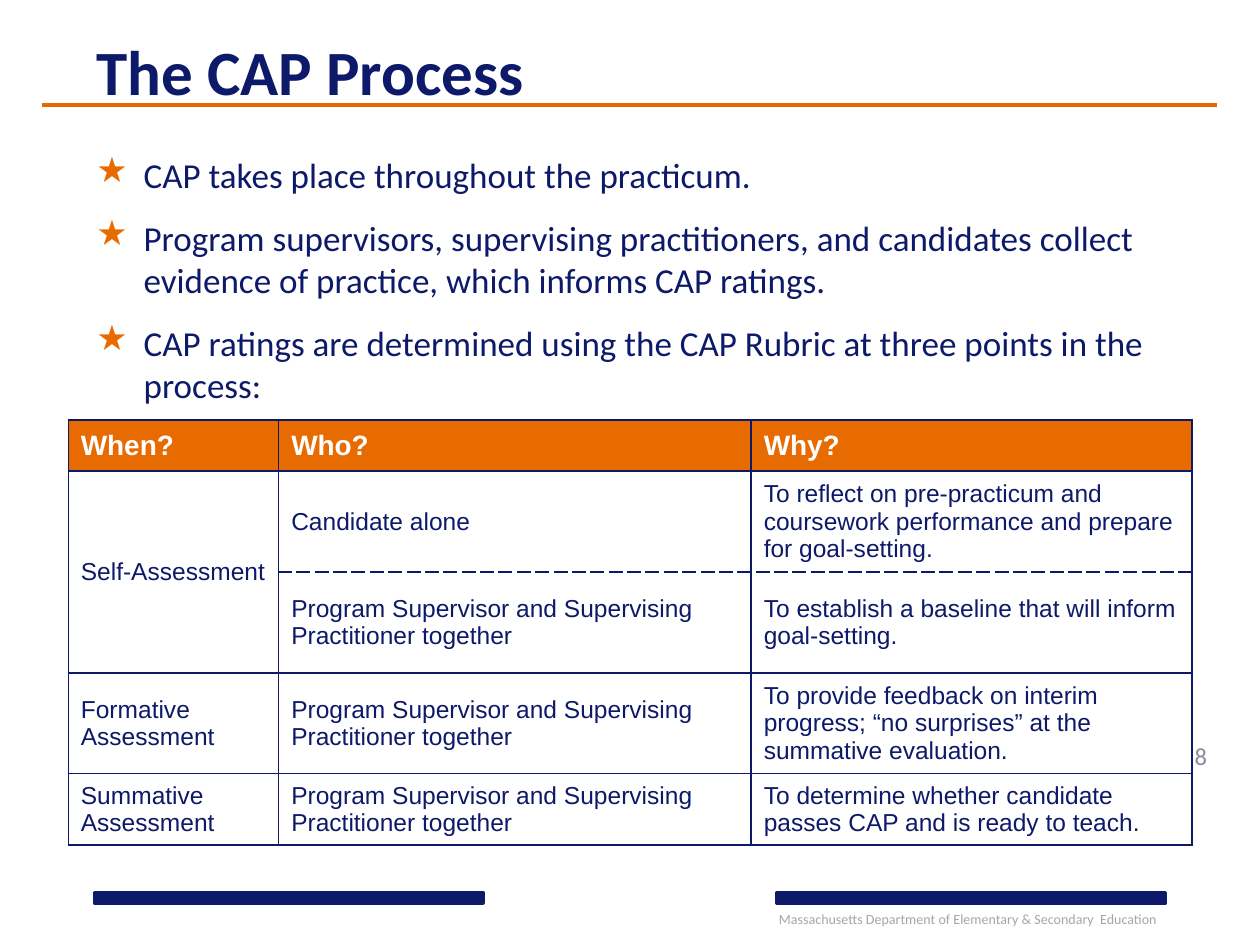
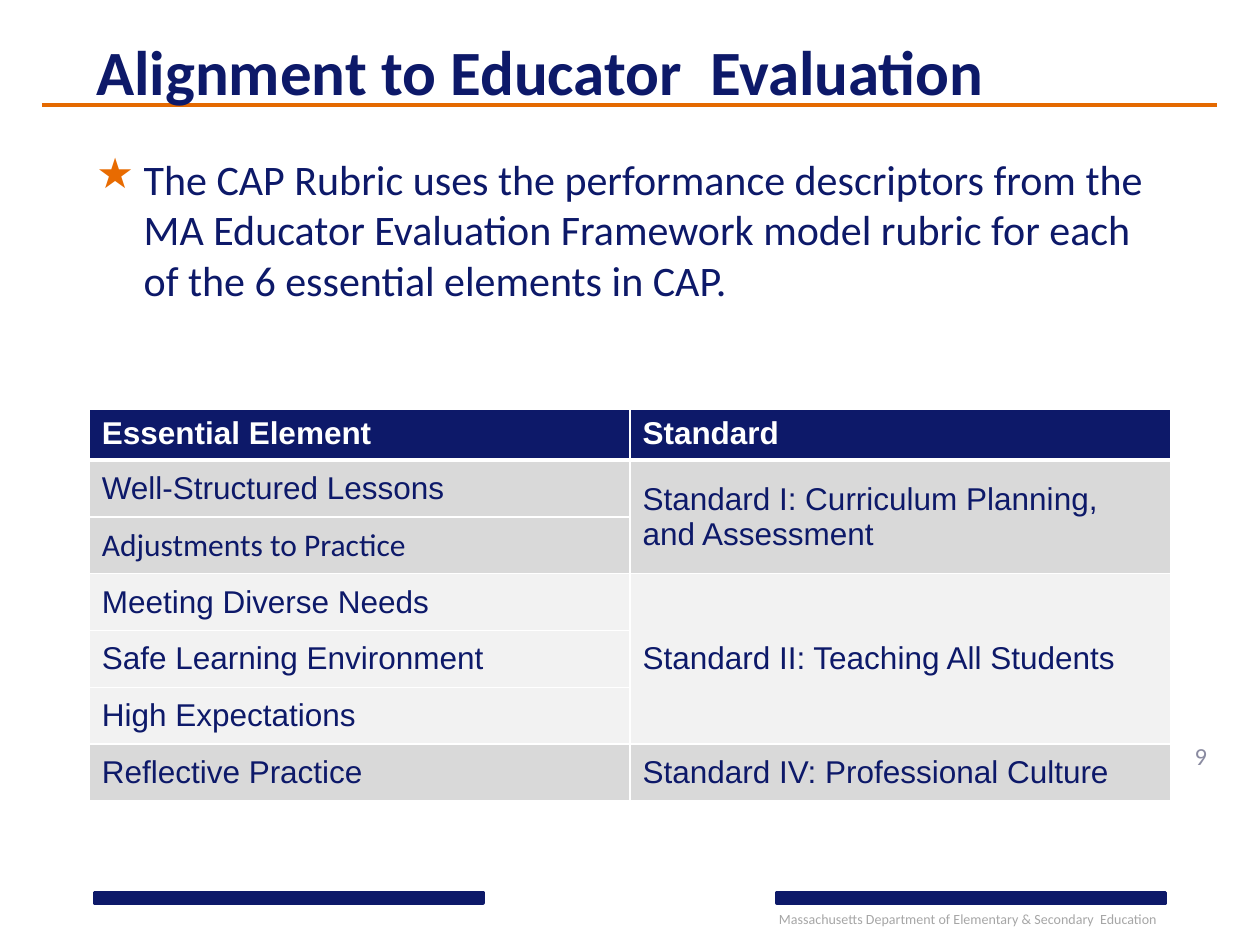
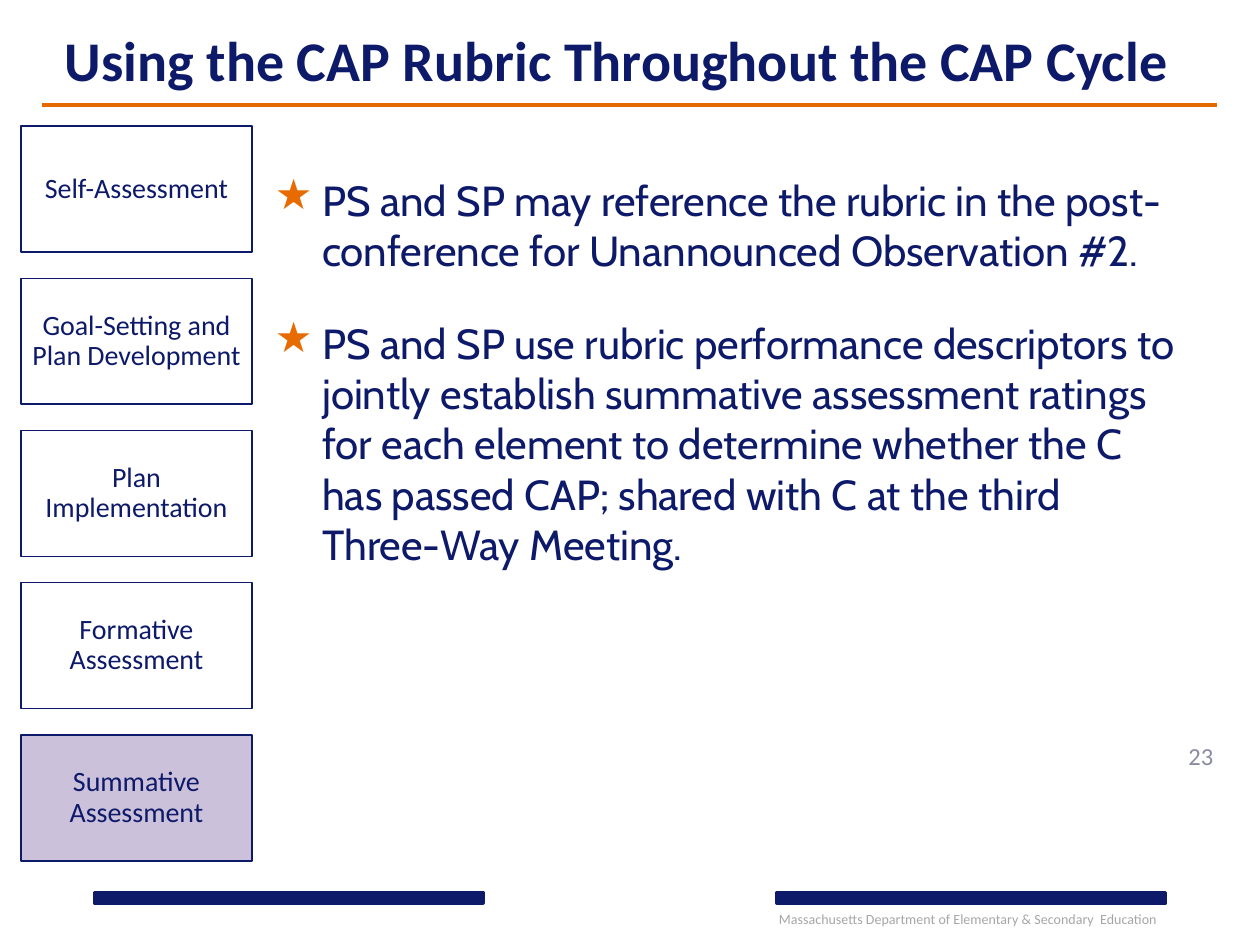
from lxml import etree
from pptx import Presentation
from pptx.dml.color import RGBColor
from pptx.enum import shapes, text
from pptx.oxml.ns import qn
from pptx.util import Pt

NAVY = RGBColor(0x0D, 0x19, 0x69)
ORANGE = RGBColor(0xE8, 0x6B, 0x01)
RULE_ORANGE = RGBColor(0xE4, 0x69, 0x00)
WHITE = RGBColor(0xFF, 0xFF, 0xFF)
SILVER = RGBColor(0xD9, 0xD9, 0xD9)
PALE = RGBColor(0xF2, 0xF2, 0xF2)
LILAC = RGBColor(0xCC, 0xC1, 0xDA)
FOOTER_GRAY = RGBColor(0xA6, 0xA6, 0xA6)
NUMBER_GRAY = RGBColor(0x8A, 0x8B, 0xA1)

MIDDLE = text.MSO_ANCHOR.MIDDLE
TOP = text.MSO_ANCHOR.TOP
CENTER = text.PP_ALIGN.CENTER

FOOTER = "Massachusetts Department of Elementary & Secondary  Education"
BAND_LEFTS = (54, 444)
INDENT = 27

TOGETHER = "Program Supervisor and Supervising Practitioner together"

# In table rows, None continues the cell above.
PROCESS = {
    "title": "The CAP Process", "number": 8,
    "bullets": [
        "CAP takes place throughout the practicum.",
        "Program supervisors, supervising practitioners, and candidates collect "
        "evidence of practice, which informs CAP ratings.",
        "CAP ratings are determined using the CAP Rubric at three points in the process:",
    ],
    "table": {
        "rows": [
            ("When?", "Who?", "Why?"),
            ("Self-Assessment", "Candidate alone",
             "To reflect on pre-practicum and coursework performance and prepare "
             "for goal-setting."),
            (None, TOGETHER, "To establish a baseline that will inform goal-setting."),
            ("Formative Assessment", TOGETHER,
             "To provide feedback on interim progress; “no surprises” at the "
             "summative evaluation."),
            ("Summative Assessment", TOGETHER,
             "To determine whether candidate passes CAP and is ready to teach."),
        ],
        "place": (39, 240),
        "widths": (120.25, 270, 252),
        "heights": (29.2, 52, 57.6, 57.6, 40.8),
        "fills": [ORANGE] + [WHITE] * 4,
        "sizes": (16, 14),
        "border": NAVY,
        "rules_under": {(1, 1): (1, "lgDash"), (1, 2): (1, "lgDash")},
        "header_anchor": MIDDLE,
        "cell_fonts": {},
    },
}
ALIGNMENT = {
    "title": "Alignment to Educator  Evaluation", "number": 9,
    "bullets": [
        "The CAP Rubric uses the performance descriptors from the MA Educator "
        "Evaluation Framework model rubric for each of the 6 essential elements in CAP.",
    ],
    "table": {
        "rows": [
            ("Essential Element", "Standard"),
            ("Well-Structured Lessons", "Standard I: Curriculum Planning, and Assessment"),
            ("Adjustments to Practice", None),
            ("Meeting Diverse Needs", "Standard II: Teaching All Students"),
            ("Safe Learning Environment", None),
            ("High Expectations", None),
            ("Reflective Practice", "Standard IV: Professional Culture"),
        ],
        "place": (51, 234),
        "widths": (309, 309),
        "heights": [24] + [32.5] * 6,
        "fills": [NAVY] + [SILVER] * 2 + [PALE] * 3 + [SILVER],
        "sizes": (18, 18),
        "border": WHITE,
        "rules_under": {(0, 0): (3, "solid"), (0, 1): (3, "solid")},
        "header_anchor": TOP,
        "cell_fonts": {(2, 0): "Calibri"},
    },
}
CYCLE = {
    "title": "Using the CAP Rubric Throughout the CAP Cycle", "number": 23,
    "bullets": [
        "PS and SP may reference the rubric in the post-conference for "
        "Unannounced Observation #2.",
        "PS and SP use rubric performance descriptors to jointly establish summative "
        "assessment ratings for each element to determine whether the C has passed CAP; "
        "shared with C at the third Three-Way Meeting.",
    ],
    "steps": ["Self-Assessment", "Goal-Setting and Plan Development",
              "Plan Implementation", "Formative Assessment", "Summative Assessment"],
    "current": "Summative Assessment",
}


def points(values):
    return [Pt(value) for value in values]


def write(para, words, color, **font):
    span = para.add_run()
    span.text = words
    span.font.color.rgb = color
    for name, value in ({"name": "Calibri"} | font).items():
        setattr(span.font, name, value)


def add_text(page, place, anchor=TOP):
    frame = page.shapes.add_textbox(*points(place)).text_frame
    frame.word_wrap = True
    frame.vertical_anchor = anchor
    return frame


def add_rectangle(page, place, line_width, fill=None):
    box = page.shapes.add_shape(shapes.MSO_SHAPE.RECTANGLE, *points(place))
    box.shadow.inherit = False
    box.line.color.rgb = NAVY
    box.line.width = Pt(line_width)
    if fill is None:
        box.fill.background()
    else:
        box.fill.solid()
        box.fill.fore_color.rgb = fill
    return box


def add_page(deck, content, title_place=(48, 12, 624, 56), title_size=36):
    """Add a slide with the shared bands, footer, number, rule and title."""
    page = deck.slides.add_slide(deck.slide_layouts[6])
    for left in BAND_LEFTS:
        add_rectangle(page, (left, 510, 222, 6), 2, NAVY)
    footer = add_text(page, (438, 517, 234, 17))
    write(footer.paragraphs[0], FOOTER, FOOTER_GRAY, size=Pt(8))
    number = add_text(page, (665.5, 414, 41.5, 36), MIDDLE).paragraphs[0]
    number.alignment = CENTER
    write(number, str(content["number"]), NUMBER_GRAY, size=Pt(14))

    rule = page.shapes.add_connector(shapes.MSO_CONNECTOR.STRAIGHT,
                                     *points((24, 60, 695.5, 60)))
    rule.line.color.rgb = RULE_ORANGE
    rule.line.width = Pt(2.25)
    etree.SubElement(rule._element.spPr, qn("a:effectLst"))

    title = add_text(page, title_place, MIDDLE)
    write(title.paragraphs[0], content["title"], NAVY, size=Pt(title_size), bold=True)
    return page


def add_star(para):
    """Give the paragraph an orange star bullet with a hanging indent."""
    props = para._p.get_or_add_pPr()
    props.set("marL", str(Pt(INDENT)))
    props.set("indent", str(-Pt(INDENT)))
    color = etree.SubElement(props, qn("a:buClr"))
    etree.SubElement(color, qn("a:srgbClr"), val=str(ORANGE))
    etree.SubElement(props, qn("a:buChar"), char="★")


def add_bullets(page, lines, place, size, gap, font="Calibri"):
    frame = add_text(page, place)
    for index, line in enumerate(lines):
        para = frame.add_paragraph() if index else frame.paragraphs[0]
        add_star(para)
        para.space_before = Pt(gap if index else 0)
        para.space_after = Pt(gap)
        write(para, line, NAVY, size=Pt(size), name=font)


def draw_border(cell, side, color, width, dash):
    line = etree.SubElement(cell._tc.get_or_add_tcPr(), qn(f"a:ln{side}"), w=str(Pt(width)))
    fill = etree.SubElement(line, qn("a:solidFill"))
    etree.SubElement(fill, qn("a:srgbClr"), val=str(color))
    etree.SubElement(line, qn("a:prstDash"), val=dash)


def add_table(page, rows, place, widths, heights, fills, sizes, border,
              rules_under, header_anchor, cell_fonts):
    plain = (1, "solid")
    size = (sum(widths), sum(heights))
    table = page.shapes.add_table(len(rows), len(widths), *points(place + size)).table
    for column, width in zip(table.columns, widths):
        column.width = Pt(width)
    for row, height in zip(table.rows, heights):
        row.height = Pt(height)

    starts = {}
    for r, row in enumerate(rows):
        for c, words in enumerate(row):
            cell = table.cell(r, c)
            cell.vertical_anchor = MIDDLE if r else header_anchor
            rules = {"L": plain, "R": plain,
                     "T": rules_under.get((r - 1, c), plain),
                     "B": rules_under.get((r, c), plain)}
            for side, rule in rules.items():
                draw_border(cell, side, border, *rule)
            cell.fill.solid()
            cell.fill.fore_color.rgb = fills[r]
            if words is None:
                continue
            starts[r, c] = cell
            write(cell.text_frame.paragraphs[0], words, NAVY if r else WHITE,
                  name=cell_fonts.get((r, c), "Arial"),
                  size=Pt(sizes[1 if r else 0]), bold=r == 0)

    for (r, c), cell in starts.items():
        last = r
        while last + 1 < len(rows) and rows[last + 1][c] is None:
            last += 1
        if last > r:
            cell.merge(table.cell(last, c))


def add_steps(page, steps, current):
    for index, step in enumerate(steps):
        box = add_rectangle(page, (12, 72 + 87 * index, 132, 72), 0.75,
                            LILAC if step == current else None)
        frame = box.text_frame
        settings = {"word_wrap": True, "vertical_anchor": MIDDLE,
                    "margin_left": Pt(3), "margin_right": Pt(3),
                    "margin_top": Pt(2), "margin_bottom": Pt(2)}
        for name, value in settings.items():
            setattr(frame, name, value)
        para = frame.paragraphs[0]
        para.alignment = CENTER
        para.line_spacing = 0.9
        write(para, step, NAVY, size=Pt(16))


def main():
    deck = Presentation()
    deck.slide_width, deck.slide_height = Pt(720), Pt(540)

    page = add_page(deck, PROCESS)
    add_bullets(page, PROCESS["bullets"], (48, 84, 624, 414), 20, 6)
    add_table(page, **PROCESS["table"])

    page = add_page(deck, ALIGNMENT)
    add_bullets(page, ALIGNMENT["bullets"], (48, 84, 624, 362), 24, 12)
    add_table(page, **ALIGNMENT["table"])

    page = add_page(deck, CYCLE, (30, 6, 654, 56), 32)
    add_steps(page, CYCLE["steps"], CYCLE["current"])
    add_bullets(page, CYCLE["bullets"], (150, 96, 534, 384), 24, 12, "Cabin")

    deck.save("out.pptx")


if __name__ == "__main__":
    main()
